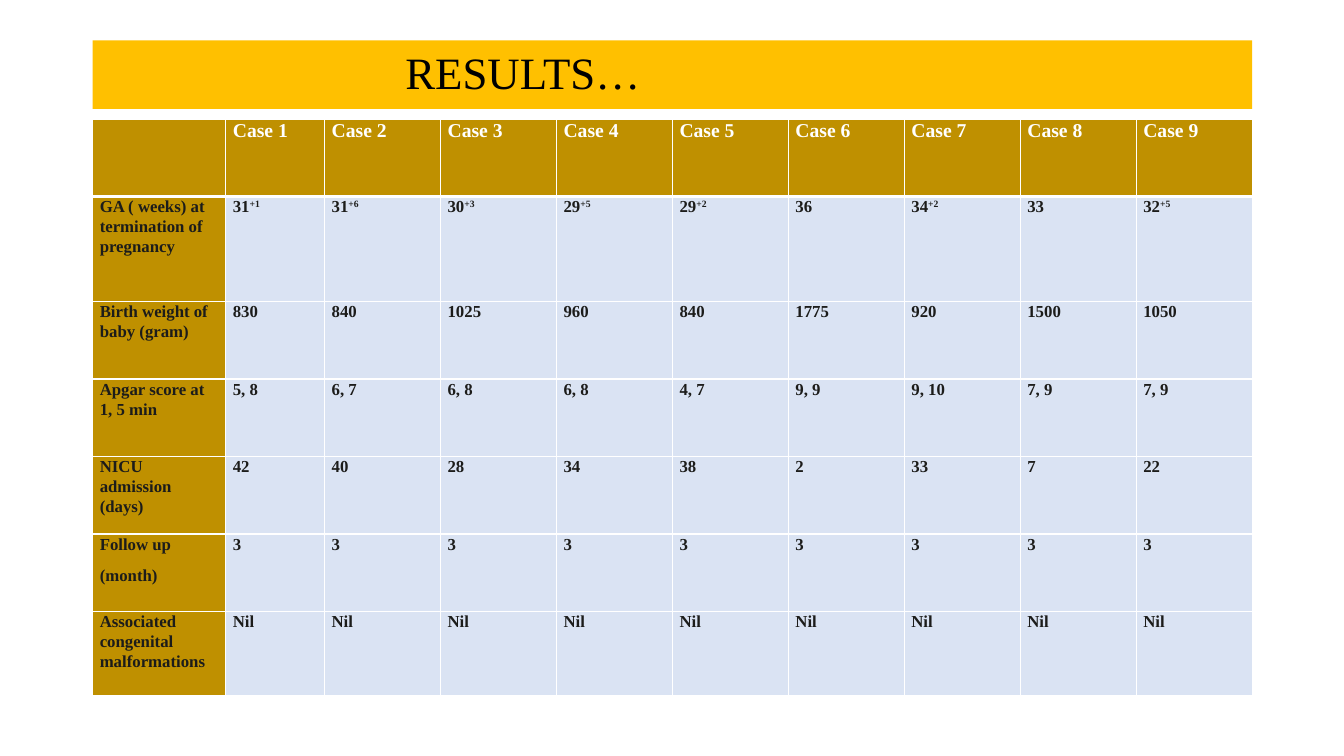
from lxml.etree import SubElement
from pptx import Presentation
from pptx.dml.color import RGBColor
from pptx.enum.shapes import MSO_SHAPE
from pptx.enum.text import MSO_ANCHOR, PP_ALIGN
from pptx.oxml.ns import qn
from pptx.util import Inches, Pt

TITLE = "RESULTS…"
CASE_COUNT = 9
HEADER = [""] + [f"Case {number}" for number in range(1, CASE_COUNT + 1)]
RESULTS = [
    ("GA ( weeks) at termination of pregnancy",
     ["31+1", "31+6", "30+3", "29+5", "29+2", "36", "34+2", "33", "32+5"]),
    ("Birth weight of baby (gram)",
     ["830", "840", "1025", "960", "840", "1775", "920", "1500", "1050"]),
    ("Apgar score at 1, 5 min",
     ["5, 8", "6, 7", "6, 8", "6, 8", "4, 7", "9, 9", "9, 10", "7, 9", "7, 9"]),
    ("NICU admission (days)",
     ["42", "40", "28", "34", "38", "2", "33", "7", "22"]),
    ("Follow up\n(month)", ["3"] * CASE_COUNT),
    ("Associated congenital malformations", ["Nil"] * CASE_COUNT),
]
ROWS = [HEADER] + [[label] + values for label, values in RESULTS]

FONT = "Times New Roman"
AMBER, GOLD, PALE_BLUE = "FFC000", "BF9000", "DAE3F3"
WHITE, BLACK, INK = "FFFFFF", "000000", "1C1C1A"

LEFT, WIDTH = 0.92, 11.5
TITLE_TOP, TITLE_HEIGHT, TITLE_INDENT = 0.4, 0.68, 3.1
TABLE_TOP = 1.18
COLUMN_WIDTHS = [1.32, 0.98] + [1.15] * (CASE_COUNT - 1)
ROW_HEIGHTS = [0.77, 1.04] + [0.77] * 4 + [0.83]


def color(value):
    return RGBColor.from_string(value)


def add_run(paragraph, text, size, text_color, bold=False):
    run = paragraph.add_run()
    run.text = text
    run.font.name = FONT
    run.font.size = Pt(size)
    run.font.bold = bold
    run.font.color.rgb = color(text_color)
    return run


def set_borders(cell, top, bottom):
    properties = cell._tc.get_or_add_tcPr()
    for side, width in (("L", 1), ("R", 1), ("T", top), ("B", bottom)):
        line = SubElement(properties, qn(f"a:ln{side}"), w=str(Pt(width)))
        fill = SubElement(line, qn("a:solidFill"))
        SubElement(fill, qn("a:srgbClr"), val=WHITE)


def fill_cell(cell, text, row, column):
    set_borders(cell, 3 if row == 1 else 1, 3 if row == 0 else 1)
    cell.fill.solid()
    cell.fill.fore_color.rgb = color(GOLD if row == 0 or column == 0 else PALE_BLUE)
    cell.margin_left = cell.margin_right = Inches(0.07)
    cell.margin_top = cell.margin_bottom = 0
    cell.vertical_anchor = MSO_ANCHOR.TOP
    if not text:
        return
    size, text_color = (14, WHITE) if row == 0 else (12, INK)
    for index, line in enumerate(text.split("\n")):
        frame = cell.text_frame
        paragraph = frame.add_paragraph() if index else frame.paragraphs[0]
        paragraph.line_spacing = 1.07
        paragraph.space_after = Pt(8)
        weeks, plus, days = line.partition("+")
        add_run(paragraph, weeks, size, text_color, True)
        if plus:
            run = add_run(paragraph, plus + days, size, text_color, True)
            run._r.get_or_add_rPr().set("baseline", "30000")


def add_title(slide):
    shape = slide.shapes.add_shape(
        MSO_SHAPE.RECTANGLE, Inches(LEFT), Inches(TITLE_TOP),
        Inches(WIDTH), Inches(TITLE_HEIGHT))
    shape.shadow.inherit = False
    shape.fill.solid()
    shape.fill.fore_color.rgb = color(AMBER)
    shape.line.fill.background()
    frame = shape.text_frame
    frame.margin_left = Inches(TITLE_INDENT)
    frame.vertical_anchor = MSO_ANCHOR.MIDDLE
    paragraph = frame.paragraphs[0]
    paragraph.alignment = PP_ALIGN.LEFT
    paragraph.line_spacing = 0.9
    add_run(paragraph, TITLE, 32, BLACK)


def add_results_table(slide):
    table = slide.shapes.add_table(
        len(ROWS), len(HEADER), Inches(LEFT), Inches(TABLE_TOP),
        Inches(WIDTH), Inches(sum(ROW_HEIGHTS))).table
    table.horz_banding = False
    for column, width in zip(table.columns, COLUMN_WIDTHS):
        column.width = Inches(width)
    for row, height in zip(table.rows, ROW_HEIGHTS):
        row.height = Inches(height)
    for row, texts in enumerate(ROWS):
        for column, text in enumerate(texts):
            fill_cell(table.cell(row, column), text, row, column)


def main():
    presentation = Presentation()
    presentation.slide_width = Inches(13.33)
    presentation.slide_height = Inches(7.5)
    slide = presentation.slides.add_slide(presentation.slide_layouts[6])
    add_title(slide)
    add_results_table(slide)
    presentation.save("out.pptx")


if __name__ == "__main__":
    main()
